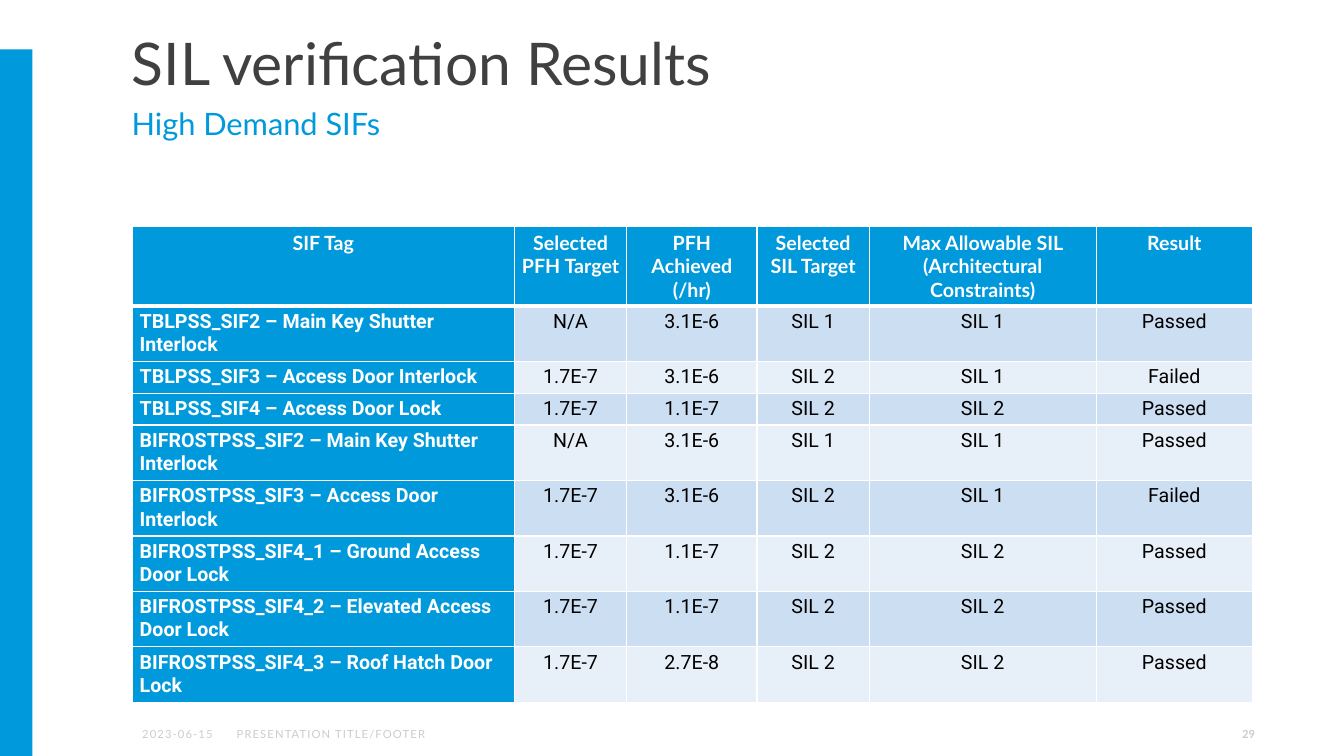
from lxml.etree import SubElement
from pptx import Presentation
from pptx.dml.color import RGBColor
from pptx.enum.shapes import MSO_SHAPE
from pptx.enum.text import MSO_ANCHOR, PP_ALIGN
from pptx.oxml.ns import qn
from pptx.util import Pt

EMU_PER_PX = 9525
BLUE = RGBColor(0x00, 0x99, 0xDC)
DARK = RGBColor(0x40, 0x40, 0x40)
GREY = RGBColor(0xCC, 0xCC, 0xCC)
WHITE = RGBColor(0xFF, 0xFF, 0xFF)
BLACK = RGBColor(0x00, 0x00, 0x00)
BANDS = (RGBColor(0xCC, 0xDE, 0xF2), RGBColor(0xE7, 0xEF, 0xF9))

HEADER = ("SIF Tag", "Selected PFH Target", "PFH Achieved (/hr)", "Selected SIL Target",
          "Max Allowable SIL (Architectural Constraints)", "Result")
RESULTS = (
    ("TBLPSS_SIF2 – Main Key Shutter Interlock", "N/A", "3.1E-6", "SIL 1", "SIL 1", "Passed"),
    ("TBLPSS_SIF3 – Access Door Interlock", "1.7E-7", "3.1E-6", "SIL 2", "SIL 1", "Failed"),
    ("TBLPSS_SIF4 – Access Door Lock", "1.7E-7", "1.1E-7", "SIL 2", "SIL 2", "Passed"),
    ("BIFROSTPSS_SIF2 – Main Key Shutter Interlock", "N/A", "3.1E-6", "SIL 1", "SIL 1", "Passed"),
    ("BIFROSTPSS_SIF3 – Access Door Interlock", "1.7E-7", "3.1E-6", "SIL 2", "SIL 1", "Failed"),
    ("BIFROSTPSS_SIF4_1 – Ground Access Door Lock", "1.7E-7", "1.1E-7", "SIL 2", "SIL 2", "Passed"),
    ("BIFROSTPSS_SIF4_2 – Elevated Access Door Lock", "1.7E-7", "1.1E-7", "SIL 2", "SIL 2", "Passed"),
    ("BIFROSTPSS_SIF4_3 – Roof Hatch Door Lock", "1.7E-7", "2.7E-8", "SIL 2", "SIL 2", "Passed"),
)
COLUMN_WIDTHS = (364, 107, 124, 107, 216, 149)
ROW_HEIGHTS = (73, 51, 29, 29, 51, 51, 51, 51, 51)


def px(*lengths):
    return [length * EMU_PER_PX for length in lengths]


class SlideBuilder:
    heading_font = "Lato"
    body_font = "Roboto"

    def __init__(self, slide):
        self.slide = slide

    def style(self, paragraph, size, color, font=heading_font, bold=False, align=PP_ALIGN.LEFT):
        paragraph.alignment = align
        for run in paragraph.runs:
            run.font.name = font
            run.font.size = Pt(size)
            run.font.bold = bold
            run.font.color.rgb = color

    def bar(self, box, color):
        bar = self.slide.shapes.add_shape(MSO_SHAPE.RECTANGLE, *px(*box))
        bar.shadow.inherit = False
        bar.fill.solid()
        bar.fill.fore_color.rgb = color
        bar.line.fill.background()

    def text(self, box, words, size, color, top=5, bottom=5, anchor=MSO_ANCHOR.TOP,
             line_spacing=None, tracking=0, **look):
        """Add a one-paragraph text box; tracking is in hundredths of a point."""
        frame = self.slide.shapes.add_textbox(*px(*box)).text_frame
        frame.word_wrap = True
        frame.vertical_anchor = anchor
        frame.margin_top, frame.margin_bottom = px(top, bottom)
        frame.text = words
        paragraph = frame.paragraphs[0]
        paragraph.line_spacing = line_spacing
        self.style(paragraph, size, color, **look)
        if tracking:
            paragraph.runs[0].font._element.set("spc", str(tracking))

    def footer(self, left, width, words, **look):
        self.text((left, 680, width, 38), words, 8, GREY, anchor=MSO_ANCHOR.MIDDLE, **look)

    def cell(self, cell, words, fill, color, bottom_border=1, **look):
        cell.margin_left, cell.margin_right, cell.margin_top, cell.margin_bottom = px(7, 7, 4, 4)
        cell.text = words
        paragraph = cell.text_frame.paragraphs[0]
        paragraph.space_after = Pt(6)
        self.style(paragraph, 14, color, **look)
        properties = cell._tc.get_or_add_tcPr()
        for side, weight in (("L", 1), ("R", 1), ("T", 1), ("B", bottom_border)):
            line = SubElement(properties, qn(f"a:ln{side}"), w=str(Pt(weight)))
            SubElement(SubElement(line, qn("a:solidFill")), qn("a:srgbClr"), val=str(WHITE))
        cell.fill.solid()
        cell.fill.fore_color.rgb = fill

    def results_table(self, left, top):
        box = px(left, top, sum(COLUMN_WIDTHS), sum(ROW_HEIGHTS))
        table = self.slide.shapes.add_table(len(ROW_HEIGHTS), len(COLUMN_WIDTHS), *box).table
        table.first_col = True
        for column, width in zip(table.columns, px(*COLUMN_WIDTHS)):
            column.width = width
        for row, height in zip(table.rows, px(*ROW_HEIGHTS)):
            row.height = height
        for c, words in enumerate(HEADER):
            self.cell(table.cell(0, c), words, BLUE, WHITE, bottom_border=3,
                      bold=True, align=PP_ALIGN.CENTER)
        for r, (tag, *values) in enumerate(RESULTS, start=1):
            self.cell(table.cell(r, 0), tag, BLUE, WHITE, font=self.body_font, bold=True)
            for c, value in enumerate(values, start=1):
                self.cell(table.cell(r, c), value, BANDS[(r - 1) % 2], BLACK,
                          font=self.body_font, align=PP_ALIGN.CENTER)


def main():
    presentation = Presentation()
    presentation.slide_width, presentation.slide_height = px(1280, 720)
    builder = SlideBuilder(presentation.slides.add_slide(presentation.slide_layouts[6]))
    builder.bar((0, 47, 31, 673), BLUE)
    builder.text((116, 28, 983, 69), "SIL verification Results", 42, DARK,
                 bottom=2, line_spacing=0.9)
    builder.text((116, 98, 983, 53), "High Demand SIFs", 22, BLUE, top=2)
    builder.results_table(126, 216)
    builder.footer(126, 87, "2023-06-15", tracking=80)
    builder.footer(216, 453, "PRESENTATION TITLE/FOOTER", tracking=80)
    builder.footer(917, 288, "29", bold=True, align=PP_ALIGN.RIGHT)
    presentation.save("out.pptx")


if __name__ == "__main__":
    main()
